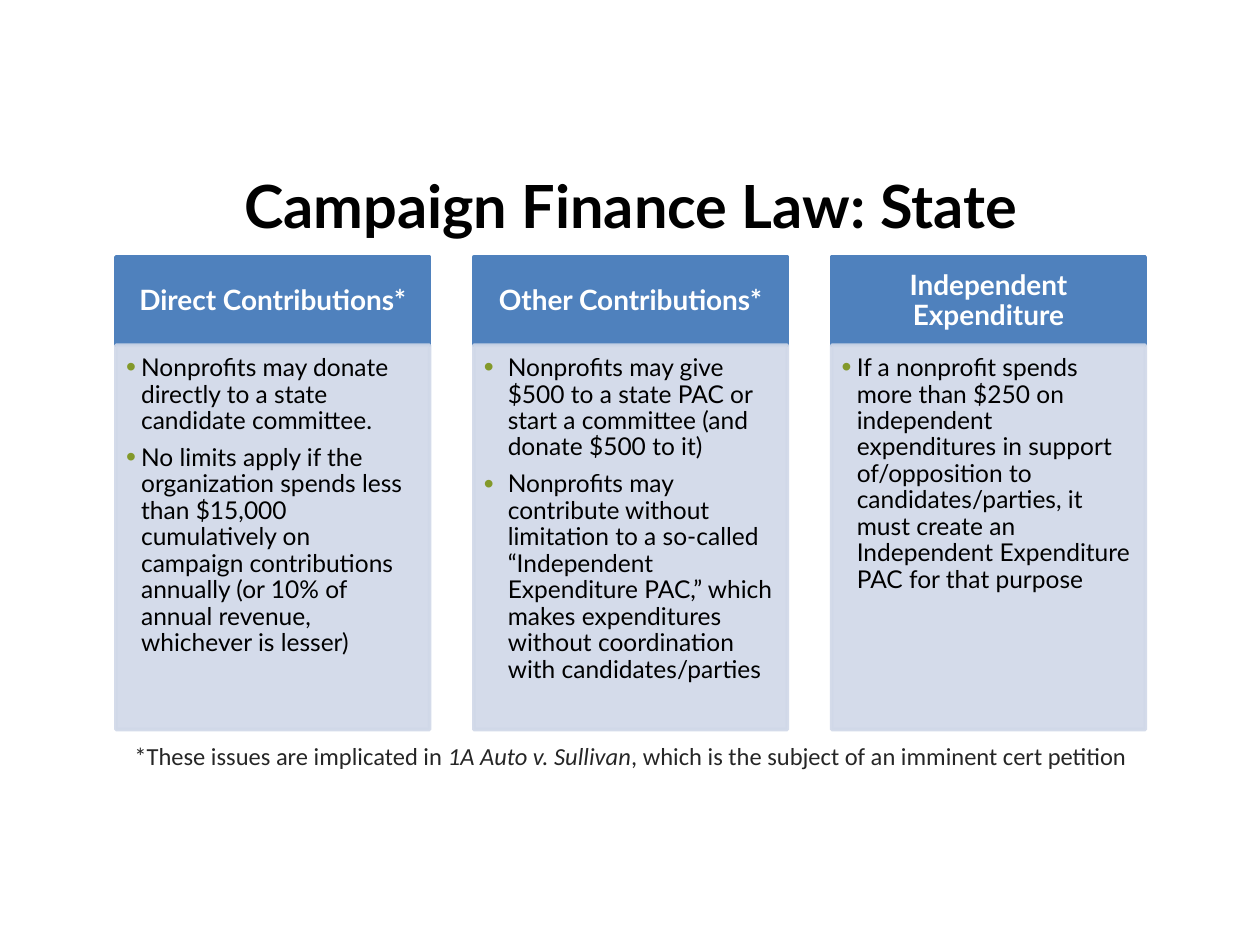
from dataclasses import dataclass

from lxml.etree import SubElement
from pptx import Presentation
from pptx.dml.color import RGBColor
from pptx.enum.shapes import MSO_SHAPE
from pptx.enum.text import MSO_ANCHOR, MSO_AUTO_SIZE, PP_ALIGN
from pptx.oxml.ns import qn
from pptx.util import Inches, Pt


@dataclass(frozen=True)
class Theme:
    """Colours, fonts and type sizes of the slide."""
    header: RGBColor = RGBColor.from_string("4F81BD")
    panel: RGBColor = RGBColor.from_string("D0D8E8")
    white: RGBColor = RGBColor.from_string("FFFFFF")
    black: RGBColor = RGBColor.from_string("000000")
    footnote: RGBColor = RGBColor.from_string("262626")
    bullet: str = "83992A"
    main_font: str = "Lato"
    footnote_font: str = "Calibri"
    title_size: Pt = Pt(34)
    header_size: Pt = Pt(16)
    body_size: Pt = Pt(14)


THEME = Theme()

COLUMNS = [
    ("Direct Contributions*", 0.12, [
        "Nonprofits may donate directly to a state candidate committee.",
        "No limits apply if the organization spends less than $15,000 cumulatively on "
        "campaign contributions annually (or 10% of annual revenue, whichever is lesser)",
    ]),
    ("Other Contributions*", 0.19, [
        "Nonprofits may give $500 to a state PAC or start a committee (and donate $500 to it)",
        "Nonprofits may contribute without limitation to a so-called “Independent Expenditure "
        "PAC,” which makes expenditures without coordination with candidates/parties",
    ]),
    ("Independent Expenditure", 0.12, [
        "If a nonprofit spends more than $250 on independent expenditures in support "
        "of/opposition to candidates/parties, it must create an Independent Expenditure "
        "PAC for that purpose",
    ]),
]

FOOTNOTE = [
    ("*These issues are implicated in ", False),
    ("1A Auto v. Sullivan", True),
    (", which is the subject of an imminent cert petition", False),
]


def style_font(font, name, size, color, bold=False):
    """Set the typeface, size, colour and weight of a font."""
    font.name, font.size, font.bold = name, size, bold
    font.color.rgb = color


def set_indent(paragraph, hang):
    """Give a paragraph a hanging indent and return its properties."""
    properties = paragraph._p.get_or_add_pPr()
    properties.set("marL", str(Inches(hang)))
    properties.set("indent", str(-Inches(hang)))
    return properties


def add_bullet(paragraph, hang):
    """Give a paragraph a coloured bullet with a hanging indent."""
    properties = set_indent(paragraph, hang)
    color = SubElement(properties, qn("a:buClr"))
    SubElement(color, qn("a:srgbClr"), val=THEME.bullet)
    SubElement(properties, qn("a:buSzPct"), val="115000")
    SubElement(properties, qn("a:buFont"), typeface="Arial")
    SubElement(properties, qn("a:buChar"), char="•")


def add_panel(slide, left, top, width, height, color, anchor, insets):
    """Draw a filled rectangle and return it with its text frame prepared."""
    panel = slide.shapes.add_shape(
        MSO_SHAPE.RECTANGLE, Inches(left), Inches(top), Inches(width), Inches(height))
    panel.shadow.inherit = False
    panel.fill.solid()
    panel.fill.fore_color.rgb = color
    panel.line.color.rgb = color
    panel.line.width = Pt(2)
    frame = panel.text_frame
    frame.word_wrap = True
    frame.vertical_anchor = anchor
    (frame.margin_left, frame.margin_top,
     frame.margin_right, frame.margin_bottom) = map(Inches, insets)
    return panel


def add_title(slide, left, top, width, height):
    """Place the slide title in its placeholder."""
    title = slide.shapes.title
    title.left, title.top = Inches(left), Inches(top)
    title.width, title.height = Inches(width), Inches(height)
    frame = title.text_frame
    frame.text = "Campaign Finance Law: State"
    frame.auto_size = MSO_AUTO_SIZE.NONE
    frame.vertical_anchor = MSO_ANCHOR.MIDDLE
    paragraph = frame.paragraphs[0]
    paragraph.alignment = PP_ALIGN.CENTER
    style_font(paragraph.font, THEME.main_font, THEME.title_size, THEME.black, True)


def add_column(slide, left, top, width, height, heading, hang, points):
    """Place a heading above a bulleted panel."""
    header_height = 0.7
    header = add_panel(slide, left, top, width, header_height, THEME.header,
                       MSO_ANCHOR.MIDDLE, (0.12, 0.07, 0.12, 0.07))
    paragraph = header.text_frame.paragraphs[0]
    paragraph.text = heading
    paragraph.alignment = PP_ALIGN.CENTER
    paragraph.line_spacing = 0.9
    style_font(paragraph.font, THEME.main_font, THEME.header_size, THEME.white, True)

    panel = add_panel(slide, left, top + header_height, width, height - header_height,
                      THEME.panel, MSO_ANCHOR.TOP, (0.08, 0.08, 0.11, 0.12))
    for color in panel._element.spPr.iter(qn("a:srgbClr")):
        SubElement(color, qn("a:alpha"), val="90000")
    frame = panel.text_frame
    for index, point in enumerate(points):
        paragraph = frame.add_paragraph() if index else frame.paragraphs[0]
        paragraph.text = point
        paragraph.level = 1
        paragraph.alignment = PP_ALIGN.LEFT
        add_bullet(paragraph, hang)
        paragraph.line_spacing = 0.9
        paragraph.space_after = Pt(6)
        style_font(paragraph.font, THEME.main_font, THEME.body_size, THEME.black)


def add_columns(slide, left, top, width, height):
    """Spread the columns evenly across the box."""
    column_width = 2.49
    pitch = (width - column_width) / (len(COLUMNS) - 1)
    for index, (heading, hang, points) in enumerate(COLUMNS):
        add_column(slide, left + index * pitch, top, column_width, height,
                   heading, hang, points)


def add_footnote(slide, left, top, width, height):
    """Place the centred footnote with the case name in italics."""
    footnote = slide.shapes.add_textbox(
        Inches(left), Inches(top), Inches(width), Inches(height))
    frame = footnote.text_frame
    frame.word_wrap = True
    frame.auto_size = MSO_AUTO_SIZE.SHAPE_TO_FIT_TEXT
    paragraph = frame.paragraphs[0]
    paragraph.alignment = PP_ALIGN.CENTER
    set_indent(paragraph, 0.31)
    style_font(paragraph.font, THEME.footnote_font, THEME.body_size, THEME.footnote)
    for text, italic in FOOTNOTE:
        run = paragraph.add_run()
        run.text = text
        run.font.italic = italic


def main():
    """Build the slide and save it."""
    presentation = Presentation()
    presentation.slide_width, presentation.slide_height = Inches(10), Inches(7.5)
    slide = presentation.slides.add_slide(presentation.slide_layouts[5])
    left, width = 0.92, 8.17
    add_title(slide, left, 1.25, width, 0.75)
    add_columns(slide, left, 2.04, width, 3.75)
    add_footnote(slide, left, 5.83, width, 0.34)
    presentation.save("out.pptx")


if __name__ == "__main__":
    main()
